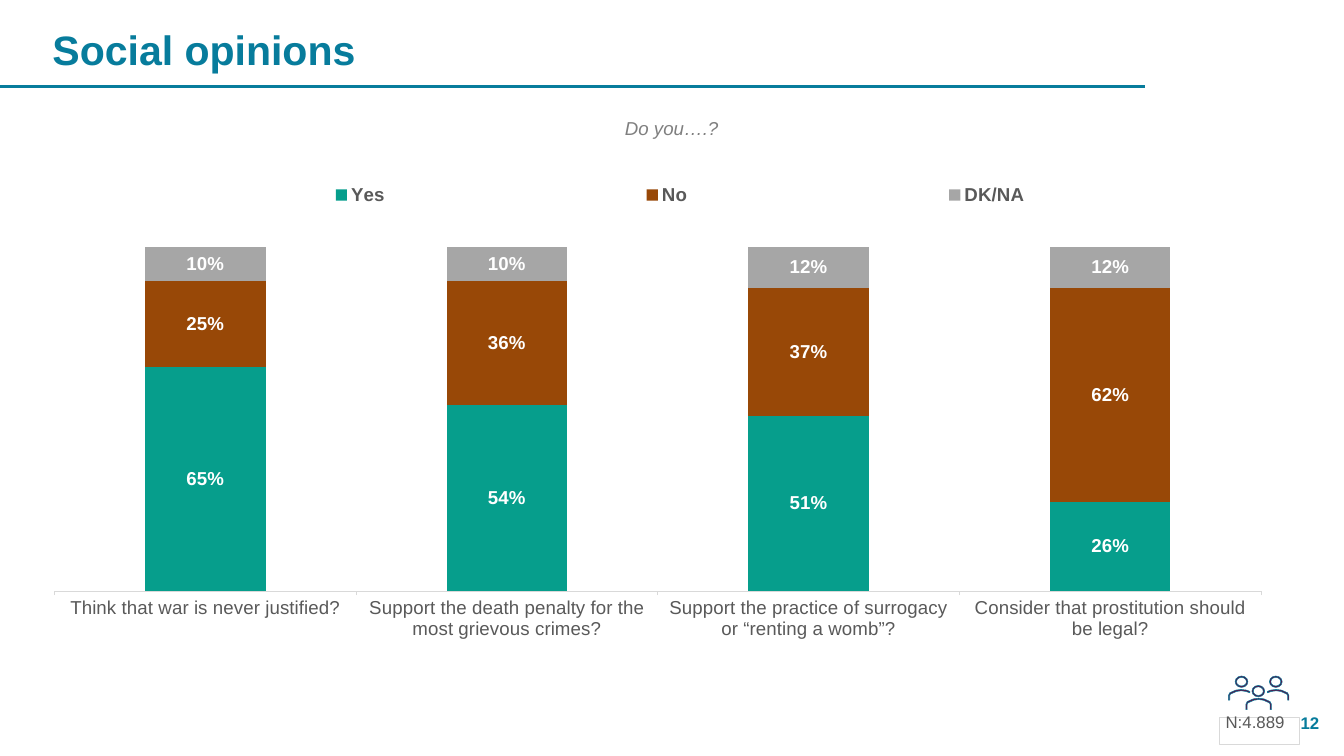
"""Build the "Social opinions" slide with a stacked column chart and a sample-size badge."""
from lxml.etree import SubElement
from pptx import Presentation
from pptx.chart.data import CategoryChartData
from pptx.dml.color import RGBColor
from pptx.enum.chart import XL_CHART_TYPE, XL_LEGEND_POSITION, XL_TICK_LABEL_POSITION, XL_TICK_MARK
from pptx.enum.shapes import MSO_CONNECTOR, MSO_SHAPE
from pptx.enum.text import MSO_ANCHOR, MSO_AUTO_SIZE, PP_ALIGN
from pptx.oxml import parse_xml
from pptx.oxml.ns import nsdecls, qn
from pptx.util import Pt

PX = 9144
TEAL, GREY, RULE = "077C9C", "595959", "D9D9D9"


def rgb(value):
    return RGBColor.from_string(value)


def style(font, size, color, bold=False, italic=False):
    font.name, font.size, font.bold, font.italic = "Arial", Pt(size), bold, italic
    font.color.rgb = rgb(color)


prs = Presentation()
prs.slide_width, prs.slide_height = 2000 * PX, 1125 * PX
s = prs.slides.add_slide(prs.slide_layouts[5])

title = s.shapes.title
title.left, title.top, title.width, title.height = 68 * PX, 39 * PX, 1515 * PX, 69 * PX
rule = s.shapes.add_connector(MSO_CONNECTOR.STRAIGHT, 0, 129 * PX, 1704 * PX, 129 * PX)
rule.line.color.rgb = rgb(TEAL)
rule.line.width = Pt(3)
SubElement(rule._element.spPr, qn("a:effectLst"))

question = s.shapes.add_textbox(315 * PX, 168 * PX, 1369 * PX, 44 * PX)
number = s.shapes.add_textbox(1740 * PX, 1055 * PX, 233 * PX, 40 * PX)

data = CategoryChartData(number_format="0%")
data.categories = [
    "Think that war is never justified?",
    "Support the death penalty for the most grievous crimes?",
    "Support the practice of surrogacy or “renting a womb”?",
    "Consider that prostitution should be legal?",
]
answers = [
    ("Yes", (0.65, 0.54, 0.51, 0.26), "069E8C"),
    ("No", (0.25, 0.36, 0.37, 0.62), "984807"),
    ("DK/NA", (0.10, 0.10, 0.12, 0.12), "A6A6A6"),
]
for name, values, color in answers:
    data.add_series(name, values)
chart = s.shapes.add_chart(
    XL_CHART_TYPE.COLUMN_STACKED_100, 24 * PX, 268 * PX, 1900 * PX, 738 * PX, data
).chart
style(chart.font, 18, "000000")
chart.has_title = False
chart.has_legend = True
chart.legend.position = XL_LEGEND_POSITION.TOP
chart.legend.include_in_layout = False
style(chart.legend.font, 20, GREY, bold=True)

plot = chart.plots[0]
plot.gap_width, plot.overlap = 150, 100
plot.vary_by_categories = False
for series, (name, values, color) in zip(plot.series, answers):
    series.format.fill.solid()
    series.format.fill.fore_color.rgb = rgb(color)
    labels = series.data_labels
    labels.show_value = True
    labels.number_format, labels.number_format_is_linked = "0%", False
    style(labels.font, 20, "FFFFFF", bold=True)

axis = chart.category_axis
axis.major_tick_mark = XL_TICK_MARK.OUTSIDE
axis.tick_label_position = XL_TICK_LABEL_POSITION.LOW
axis.format.line.color.rgb = rgb(RULE)
axis.format.line.width = Pt(0.75)
style(axis.tick_labels.font, 20, GREY)
chart.value_axis.visible = False
chart.value_axis.has_major_gridlines = False
chart.value_axis.minimum_scale, chart.value_axis.maximum_scale = 0, 1

plot_area = chart._chartSpace.chart.plotArea
legend = chart.legend._element
for area, target, box in [
    (plot_area, '<c:layoutTarget val="inner"/>', (0.03, 0.135, 0.945, 0.694)),
    (legend, "", (0.05, 0, 0.94, 0.06)),
]:
    for old in area.findall(qn("c:layout")):
        area.remove(old)
    sizes = "".join(f'<c:{tag} val="{v}"/>' for tag, v in zip("xywh", box))
    layout = parse_xml(
        f'<c:layout {nsdecls("c")}><c:manualLayout>{target}<c:xMode val="edge"/>'
        f'<c:yMode val="edge"/>{sizes}</c:manualLayout></c:layout>'
    )
    area.insert(0 if area is plot_area else 1, layout)

icon = []
for left, top in [(1838, 1006), (1889, 1006), (1863, 1020)]:
    head = s.shapes.add_shape(MSO_SHAPE.DONUT, left * PX, top * PX, 19 * PX, 17 * PX)
    head.adjustments[0] = 0.12
    icon.append(head)

left_arm = [
    (1860, 1031), (1860, 1029), (1855, 1027), (1847, 1026), (1839, 1027), (1830, 1031),
    (1828, 1035), (1828, 1042), (1830, 1042), (1830, 1035), (1831, 1033), (1840, 1029),
    (1847, 1028), (1854, 1029),
]
right_arm = [(3746 - x, y) for x, y in left_arm]
middle = [
    (1890, 1044), (1881, 1040), (1873, 1039), (1865, 1040), (1856, 1044), (1854, 1048),
    (1854, 1056), (1856, 1056), (1856, 1048), (1857, 1046), (1866, 1042), (1873, 1041),
    (1880, 1042), (1889, 1046), (1890, 1048), (1890, 1056), (1892, 1056), (1892, 1048),
]
for points in (left_arm, right_arm, middle):
    builder = s.shapes.build_freeform(*points[0], scale=PX)
    builder.add_line_segments(points[1:], close=True)
    icon.append(builder.convert_to_shape())

badge = s.shapes.add_shape(MSO_SHAPE.RECTANGLE, 1814 * PX, 1068 * PX, 119 * PX, 40 * PX)
for sp, fill, line, width in [(part, "660039", TEAL, 0.59) for part in icon] + [
    (badge, "FFFFFF", RULE, 0.5)
]:
    sp.shadow.inherit = False
    sp.fill.solid()
    sp.fill.fore_color.rgb = rgb(fill)
    sp.line.color.rgb = rgb(line)
    sp.line.width = Pt(width)

for sp, text, align, size, color, bold, italic in [
    (title, "Social opinions", PP_ALIGN.LEFT, 44, TEAL, True, False),
    (question, "Do you….?", PP_ALIGN.CENTER, 20, "7F7F7F", False, True),
    (number, "12", PP_ALIGN.RIGHT, 18, TEAL, True, False),
    (badge, "N:4.889", PP_ALIGN.LEFT, 18, GREY, False, False),
]:
    tf = sp.text_frame
    tf.word_wrap = True
    tf.auto_size = MSO_AUTO_SIZE.NONE
    tf.vertical_anchor = MSO_ANCHOR.MIDDLE
    p = tf.paragraphs[0]
    p.alignment = align
    r = p.add_run()
    r.text = text
    style(r.font, size, color, bold, italic)
badge.text_frame.margin_top, badge.text_frame.margin_bottom = 0, 28 * PX

prs.save("out.pptx")
